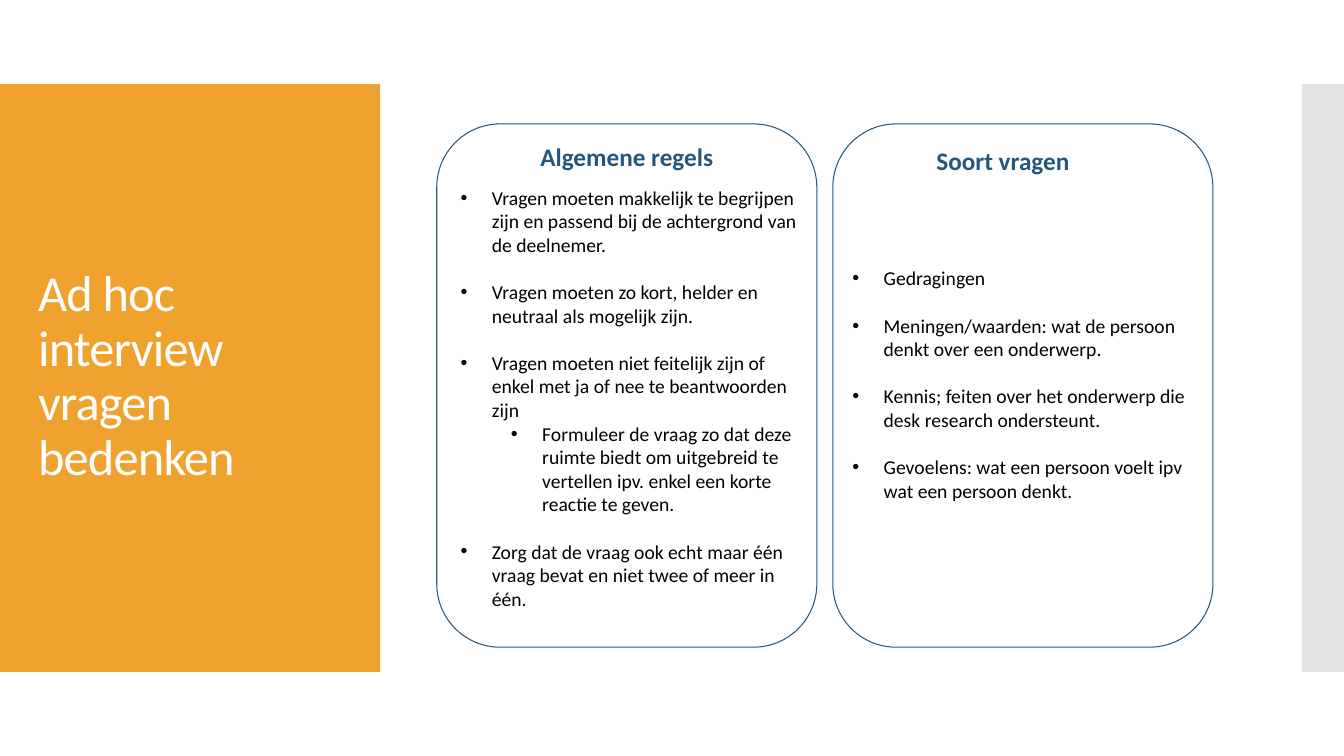
import pptx
import pptx.util
import pptx.dml.color
import pptx.enum.shapes
import pptx.enum.text
import pptx.oxml.ns
from dataclasses import dataclass
from lxml import etree


@dataclass(frozen=True)
class Theme:
    font: str = "Calibri"
    gold: str = "F0A22E"
    grey: str = "E3E3E3"
    blue: str = "25567B"
    white: str = "FFFFFF"
    black: str = "000000"
    title: float = 36
    head: float = 18
    body: float = 14
    gap: float = 17


THEME = Theme()
COLS, ROWS = 32, 18
WIDE, HIGH = pptx.util.Inches(13.333), pptx.util.Inches(7.5)
SHAPES = pptx.enum.shapes.MSO_SHAPE

CARD_X, CARD_STEP, CARD_Y, CARD_W, CARD_H = 10.4, 9.43, 2.95, 9.05, 12.46

# Each item: text, level, whether a gap follows.
RULES = [
    ("Vragen moeten makkelijk te begrijpen zijn en passend bij de "
     "achtergrond van de deelnemer.", 0, True),
    ("Vragen moeten zo kort, helder en neutraal als mogelijk zijn.", 0, True),
    ("Vragen moeten niet feitelijk zijn of enkel met ja of nee te "
     "beantwoorden zijn", 0, False),
    ("Formuleer de vraag zo dat deze ruimte biedt om uitgebreid te vertellen "
     "ipv. enkel een korte reactie te geven.", 1, True),
    ("Zorg dat de vraag ook echt maar één vraag bevat en niet twee of meer "
     "in één.", 0, False),
]
KINDS = [
    ("Gedragingen", 0, True),
    ("Meningen/waarden: wat de persoon denkt over een onderwerp.", 0, True),
    ("Kennis; feiten over het onderwerp die desk research ondersteunt.", 0, True),
    ("Gevoelens: wat een persoon voelt ipv wat een persoon denkt.", 0, False),
]


def place(x, y, w, h):
    """Turn columns and rows of the grid into slide lengths."""
    return [round(n * size / count) for n, size, count in
            ((x, WIDE, COLS), (y, HIGH, ROWS), (w, WIDE, COLS), (h, HIGH, ROWS))]


def paint(code):
    return pptx.dml.color.RGBColor.from_string(code)


def add_bar(slide, box, color):
    bar = slide.shapes.add_shape(SHAPES.RECTANGLE, *place(*box))
    bar.shadow.inherit = False
    bar.fill.solid()
    bar.fill.fore_color.rgb = paint(color)
    bar.line.fill.background()


def add_card(slide, box):
    card = slide.shapes.add_shape(SHAPES.ROUNDED_RECTANGLE, *place(*box))
    card.shadow.inherit = False
    card.fill.background()
    card.line.color.rgb = paint(THEME.blue)
    card.line.width = pptx.util.Pt(0.75)


def add_frame(slide, box):
    frame = slide.shapes.add_textbox(*place(*box)).text_frame
    frame.word_wrap = True
    return frame


def style(para, size, color, bold=False):
    para.font.name = THEME.font
    para.font.size = pptx.util.Pt(size)
    para.font.color.rgb = paint(color)
    para.font.bold = bold


def add_title(slide, box, text):
    frame = add_frame(slide, box)
    frame.vertical_anchor = pptx.enum.text.MSO_ANCHOR.MIDDLE
    para = frame.paragraphs[0]
    run = para.add_run()
    run.text = text
    para.line_spacing = 0.9
    style(para, THEME.title, THEME.white)
    run.font.bold = False
    run.font._element.set("spc", "-60")


def add_head(slide, box, text):
    para = add_frame(slide, box).paragraphs[0]
    para.text = text
    style(para, THEME.head, THEME.blue, True)


def add_list(slide, box, items):
    frame = add_frame(slide, box)
    for i, (text, level, gap) in enumerate(items):
        para = frame.add_paragraph() if i else frame.paragraphs[0]
        para.text = text
        para.level = level
        para.space_after = pptx.util.Pt(THEME.gap if gap else 0)
        style(para, THEME.body, THEME.black)
        set_bullet(para, level)


def set_bullet(para, level):
    hang = pptx.util.Inches(0.31)
    props = para._p.get_or_add_pPr()
    props.set("marL", str(hang + level * pptx.util.Inches(0.5)))
    props.set("indent", str(-hang))
    font = etree.Element(pptx.oxml.ns.qn("a:buFont"), typeface="Arial")
    mark = etree.Element(pptx.oxml.ns.qn("a:buChar"), char="•")
    rest = props.find(pptx.oxml.ns.qn("a:defRPr"))
    rest.addprevious(font)
    rest.addprevious(mark)


def main():
    deck = pptx.Presentation()
    deck.slide_width, deck.slide_height = WIDE, HIGH
    slide = deck.slides.add_slide(deck.slide_layouts[6])

    add_bar(slide, (0, 2, CARD_W, 14), THEME.gold)
    add_bar(slide, (31, 2, 1, 14), THEME.grey)
    add_title(slide, (0.67, 2.95, 7.73, 12.07), "Ad hoc interview vragen bedenken")

    cards = [
        ("Algemene regels", 3.24, RULES, (10.73, 4.3, 8.73, 10.4)),
        ("Soort vragen", 3.34, KINDS, (20.06, 6.22, 8.8, 7.5)),
    ]
    for i, (head, top, items, box) in enumerate(cards):
        left = CARD_X + i * CARD_STEP
        add_card(slide, (left, CARD_Y, CARD_W, CARD_H))
        add_head(slide, (left + 2.23, top, 7.97, 1.39), head)
        add_list(slide, box, items)

    deck.save("out.pptx")


if __name__ == "__main__":
    main()
